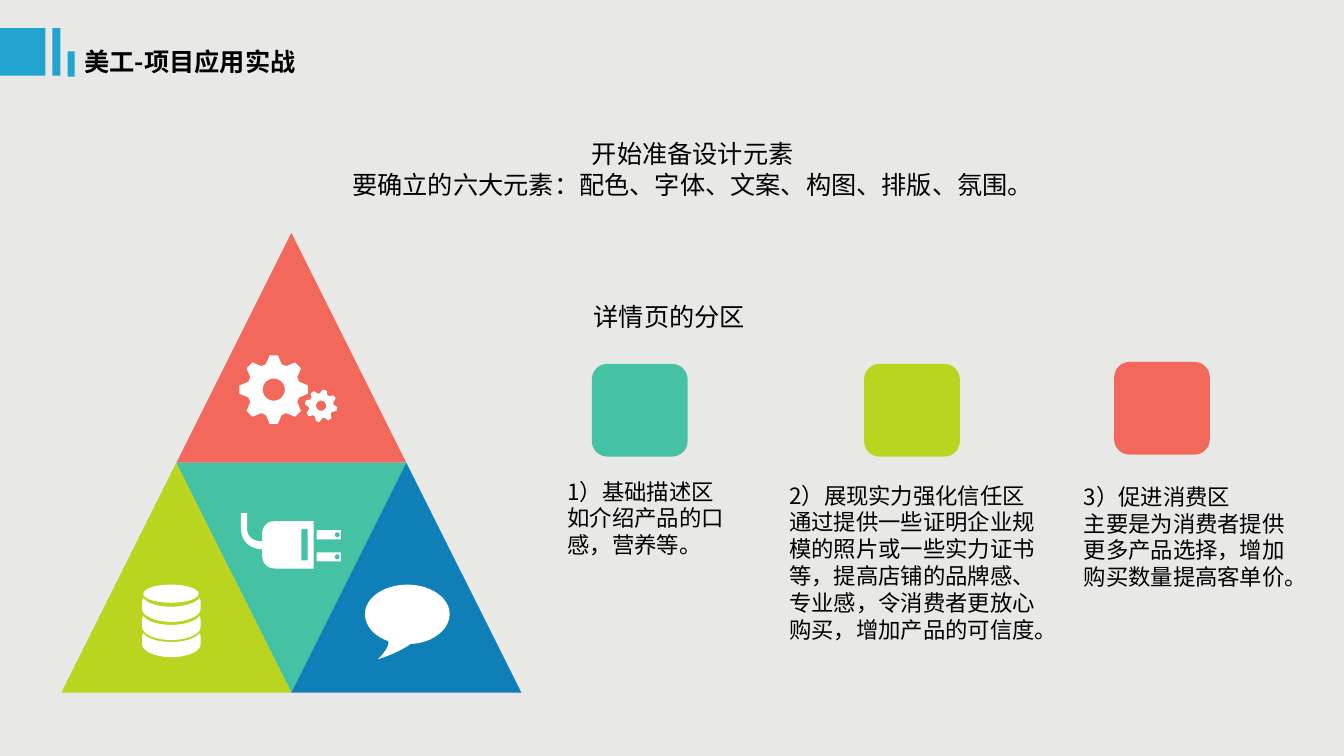
from math import cos, pi, radians, sin

from lxml import etree
from pptx import Presentation
from pptx.dml.color import RGBColor
from pptx.enum.shapes import MSO_SHAPE
from pptx.enum.text import MSO_ANCHOR, MSO_AUTO_SIZE, PP_ALIGN
from pptx.oxml.ns import qn
from pptx.util import Pt

PX = 9144  # 100 px to the inch
RECT = MSO_SHAPE.RECTANGLE
ROUND = MSO_SHAPE.ROUNDED_RECTANGLE
TRI = MSO_SHAPE.ISOSCELES_TRIANGLE
OVAL = MSO_SHAPE.OVAL
LEFT, CENTER = PP_ALIGN.LEFT, PP_ALIGN.CENTER
TOP, MIDDLE = MSO_ANCHOR.TOP, MSO_ANCHOR.MIDDLE
FIT = MSO_AUTO_SIZE.SHAPE_TO_FIT_TEXT

CORAL, LIME, TEAL, BLUE = "F2685A", "B9D51F", "45C1A4", "0E7FB7"
SKY, WHITE, BLACK, PAPER = "21A3D0", "FFFFFF", "000000", "E8E8E6"
SANS = "Noto Sans CJK SC"


def paint(fill, color):
    fill.solid()
    fill.fore_color.rgb = RGBColor.from_string(color)


def trace(path, steps=12):
    """Turn a path of (x, y) corners and six-number Bezier steps into points."""
    points = []
    for step in path:
        if len(step) == 2:
            points.append(step)
            continue
        ctrl = [points[-1], step[:2], step[2:4], step[4:]]
        for i in range(1, steps + 1):
            t = i / steps
            parts = ((1 - t) ** 3, 3 * t * (1 - t) ** 2, 3 * t * t * (1 - t), t ** 3)
            points.append(tuple(sum(w * p[k] for w, p in zip(parts, ctrl))
                                for k in (0, 1)))
    return points


def ring(x, y, r, count=32):
    return [(x + r * cos(2 * pi * i / count), y + r * sin(2 * pi * i / count))
            for i in range(count)]


def cog(x, y, r, tilt=0, teeth=8):
    """Outline of a gear: each tooth is wide at its root and narrow at its tip."""
    points = []
    for i in range(teeth):
        a = radians(tilt + 360 * i / teeth)
        for out, side in ((.74, -.23), (1, -.12), (1, .12), (.74, .23)):
            points.append((x + r * (out * cos(a) - side * sin(a)),
                           y + r * (out * sin(a) + side * cos(a))))
    return points


def box(x, y, w, h):
    return [(x, y), (x + w, y), (x + w, y + h), (x, y + h)]


class Board:
    def __init__(self, deck, back):
        self.slide = deck.slides.add_slide(deck.slide_layouts[6])
        self.area = self.slide.shapes
        paint(self.slide.background.fill, back)

    def group(self):
        """Send the next shapes into a new group."""
        self.area = self.slide.shapes.add_group_shape().shapes

    def leave(self):
        """Send the next shapes to the slide itself."""
        self.area = self.slide.shapes

    def style(self, shape, color):
        shape.shadow.inherit = False
        paint(shape.fill, color)
        shape.line.fill.background()
        return shape

    def shape(self, kind, x, y, w, h, color):
        spot = [v * PX for v in (x, y, w, h)]
        return self.style(self.area.add_shape(kind, *spot), color)

    def free(self, *paths, color=WHITE):
        """Draw one outline; the later paths cut holes in the first."""
        pen = None
        for path in paths:
            first, *rest = [(x * PX, y * PX) for x, y in trace(path)]
            if pen:
                pen.move_to(*first)
            else:
                pen = self.area.build_freeform(*first)
            pen.add_line_segments(rest, close=True)
        return self.style(pen.convert_to_shape(), color)

    def text(self, words, x, y, w, h, size=18, font=SANS, bold=False,
             align=LEFT, anchor=TOP, inset=(10, 5)):
        frame = self.area.add_textbox(x * PX, y * PX, w * PX, h * PX).text_frame
        frame.word_wrap = True
        frame.auto_size = FIT
        frame.vertical_anchor = anchor
        frame.margin_left = frame.margin_right = inset[0] * PX
        frame.margin_top = frame.margin_bottom = inset[1] * PX
        for i, line in enumerate(words.split("\n")):
            para = frame.add_paragraph() if i else frame.paragraphs[0]
            para.alignment = align
            run = para.add_run()
            run.text = line
            run.font.size = Pt(size)
            run.font.bold = bold
            run.font.name = font
            paint(run.font.fill, BLACK)
            etree.SubElement(run.font._element, qn("a:ea"), typeface=SANS)


def pyramid(board):
    side, left, top = 228, 61, 231
    half, base = side // 2, top + side
    board.group()
    for x, y, color, turn in ((left + half, top, CORAL, 0), (left, base, LIME, 0),
                              (left + half, base, TEAL, 180),
                              (left + side, base, BLUE, 0)):
        board.shape(TRI, x, y, side, side, color).rotation = turn
    board.leave()


def plug(board):
    board.group()
    board.free([(260, 529), (260, 537), (244, 537, 245, 524, 245, 524), (245, 509),
                (239, 509), (239, 524), (239, 545, 260, 545, 260, 545), (260, 550),
                (260, 550, 259, 564, 273, 564), (311, 564), (311, 517), (273, 517),
                (260, 517, 260, 529, 260, 529)], box(299, 525, 6, 31))
    for y in (526, 548):
        board.free(box(314, y, 24, 9), ring(334.5, y + 4.5, 2.5))
    board.leave()


def drum(board):
    board.group()
    for y in (593, 611, 628):
        board.free([(198, y), (195, y + 5, 183, y + 9, 170, y + 9),
                    (156, y + 9, 145, y + 5, 142, y), (141, y + 3), (141, y + 11),
                    (141, y + 18, 154, y + 24, 170, y + 24),
                    (186, y + 24, 199, y + 18, 199, y + 11), (199, y + 3)])
    board.shape(OVAL, 142, 580, 55, 18, WHITE)
    board.leave()


def gears(board):
    board.group()
    for x, y, r, hub, tilt in ((271.5, 386.5, 34, 11, 0), (318.5, 402.5, 16, 5, 12)):
        board.free(cog(x, y, r, tilt), ring(x, y, hub))
    board.leave()


def bubble(board):
    board.free([(446, 609), (446, 593, 427, 580, 404, 580),
                (381, 580, 362, 593, 362, 609), (362, 621, 371, 631, 385, 636),
                (386, 639, 384, 645, 375, 654), (375, 654, 395, 648, 407, 639),
                (429, 638, 446, 625, 446, 609)])


def header(board):
    board.group()
    for x, y, w, h in ((0, 28, 45, 47), (52, 28, 8, 47), (67, 51, 7, 25)):
        board.shape(RECT, x, y, w, h, SKY)
    board.leave()
    board.text("美工-项目应用实战", 74, 41, 271, 40, bold=True)


def main():
    deck = Presentation()
    deck.slide_width, deck.slide_height = 1333 * PX, 750 * PX
    board = Board(deck, PAPER)
    board.text("开始准备设计元素\n要确立的六大元素：配色、字体、文案、构图、排版、氛围。",
               115, 134, 1144, 67, align=CENTER, anchor=MIDDLE, inset=(7, 3))
    pyramid(board)
    for x, y, color in ((587, 361, TEAL), (857, 361, LIME), (1105, 359, CORAL)):
        board.shape(ROUND, x, y, 95, 92, color)
    for icon in (plug, drum, gears, bubble, header):
        icon(board)
    board.text("详情页的分区", 579, 294, 278, 40, font="Calibri")
    for words, *spot in (
            ("1）基础描述区\n如介绍产品的口感，营养等。", 553, 469, 196, 91),
            ("2）展现实力强化信任区\n通过提供一些证明企业规模的照片或一些实力证书等，"
             "提高店铺的品牌感、专业感，令消费者更放心购买，增加产品的可信度。",
             773, 473, 278, 172),
            ("3）促进消费区\n主要是为消费者提供更多产品选择，增加购买数量提高客单价。",
             1065, 474, 241, 118)):
        board.text(words, *spot, size=16)
    deck.save("out.pptx")


if __name__ == "__main__":
    main()
